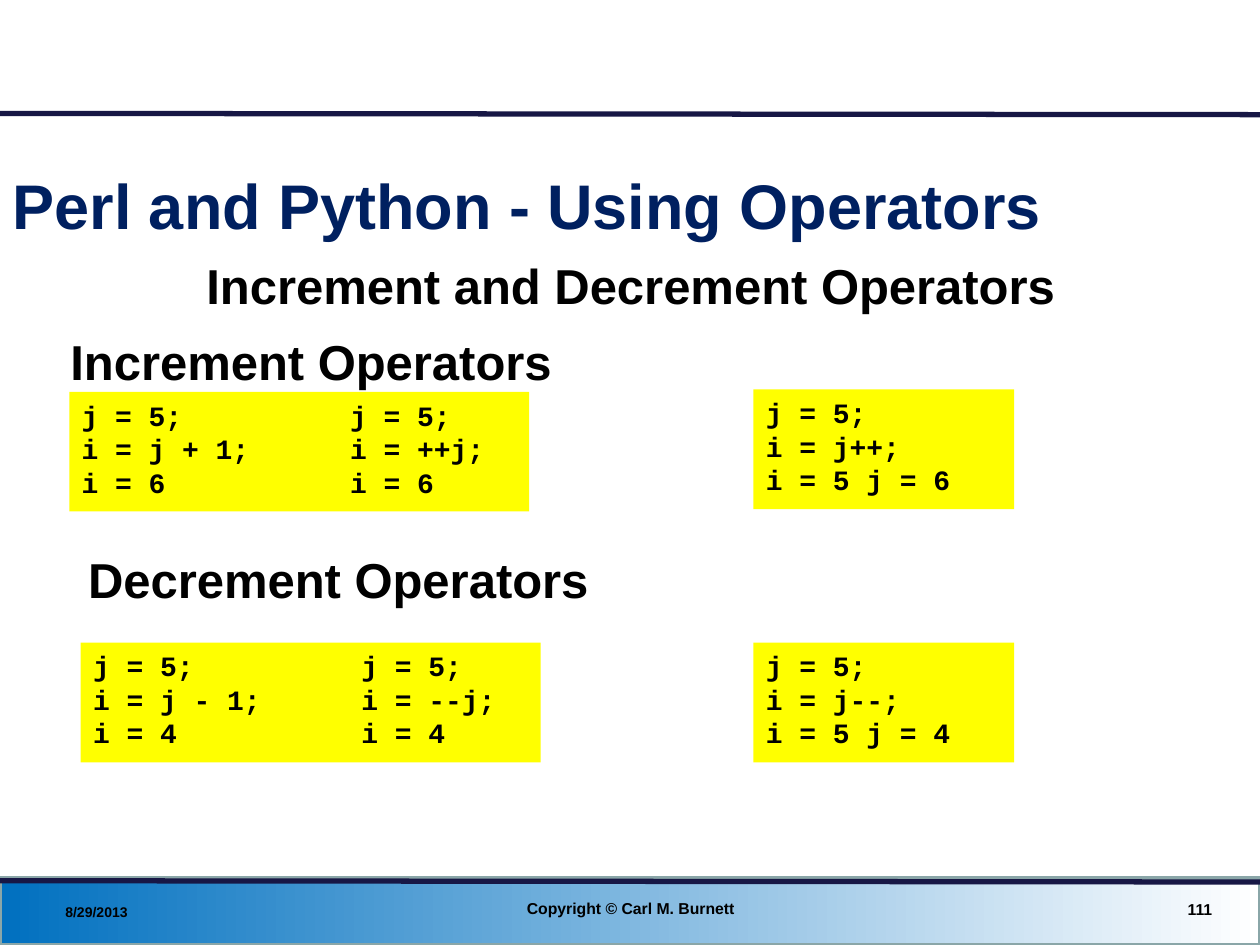
from lxml import etree
from pptx import Presentation
from pptx.dml.color import RGBColor
from pptx.enum.shapes import MSO_CONNECTOR, MSO_SHAPE
from pptx.enum.text import MSO_ANCHOR, MSO_AUTO_SIZE, PP_ALIGN
from pptx.oxml.ns import qn
from pptx.util import Pt

PX = 9144  # 100 px to the inch
W, H = 1000, 750

BLACK = RGBColor(0, 0, 0)
WHITE = RGBColor(0xFF, 0xFF, 0xFF)
NAVY = RGBColor(0x00, 0x20, 0x60)
RULE = RGBColor(0x17, 0x17, 0x45)
BLUE = RGBColor(0x00, 0x70, 0xC0)
EDGE = RGBColor(0x8A, 0xA6, 0xA8)
YELLOW = RGBColor(0xFF, 0xFF, 0x00)

TITLE = dict(name="Arial", size=Pt(36), bold=True)
HEADING = dict(name="Arial", size=Pt(28), bold=True)
CODE = dict(name="Courier New", size=Pt(16), bold=True)
NOTE = dict(name="Arial", size=Pt(9), bold=True)
DATE = dict(NOTE, size=Pt(8))
CODE_TAB = 213


def emu(*lengths):
    return [n * PX for n in lengths]


def place(sp, box):
    sp.left, sp.top, sp.width, sp.height = emu(*box)


def write(sp, lines, style, color=BLACK, align=PP_ALIGN.LEFT,
          anchor=MSO_ANCHOR.TOP, inset=5, tab=None):
    tf = sp.text_frame
    tf.word_wrap = True
    tf.auto_size = MSO_AUTO_SIZE.NONE
    tf.vertical_anchor = anchor
    tf.margin_left = tf.margin_right = 10 * PX
    tf.margin_top, tf.margin_bottom = emu(inset, 5)
    for i, line in enumerate(lines):
        p = tf.paragraphs[0] if i == 0 else tf.add_paragraph()
        p.alignment = align
        p.space_before = Pt(0)
        if tab:
            tabs = etree.SubElement(p._p.get_or_add_pPr(), qn("a:tabLst"))
            etree.SubElement(tabs, qn("a:tab"), pos=str(tab * PX), algn="l")
        r = p.add_run()
        r.text = line
        for key, value in style.items():
            setattr(r.font, key, value)
        r.font.color.rgb = color


def add_text(s, box, text, style, **options):
    write(s.shapes.add_textbox(*emu(*box)), [text], style, **options)


def add_rule(s, y):
    line = s.shapes.add_connector(MSO_CONNECTOR.STRAIGHT, *emu(0, y, W, y + 1))
    line.line.color.rgb = RULE
    line.line.width = Pt(3)
    etree.SubElement(line._element.spPr, qn("a:effectLst"))


def add_footer(s, x, y, w, h):
    # Gradient band
    band = s.shapes.add_shape(MSO_SHAPE.RECTANGLE, *emu(x, y, w, h))
    band.shadow.inherit = False
    band.fill.gradient()
    band.fill.gradient_angle = 0
    for stop, position, color in zip(band.fill.gradient_stops, (0, 1), (BLUE, WHITE)):
        stop.position = position
        stop.color.rgb = color
    band.line.color.rgb = EDGE
    band.line.width = Pt(2)
    add_rule(s, y + 2)

    # Date, copyright and slide number
    middle = MSO_ANCHOR.MIDDLE
    add_text(s, (x + 42, y + 13, 233, 27), "8/29/2013", DATE, anchor=middle)
    add_text(s, (x + 342, y + 9, 317, 29), "Copyright © Carl M. Burnett", NOTE,
             align=PP_ALIGN.CENTER, anchor=middle)
    add_text(s, (x + 739, y + 10, 233, 29), "111", NOTE,
             align=PP_ALIGN.RIGHT, anchor=middle)


def add_header(s):
    title, body = s.shapes.title, s.placeholders[1]
    place(title, (0, 114, 958, 97))
    write(title, ["Perl and Python - Using Operators"], TITLE, NAVY,
          anchor=MSO_ANCHOR.MIDDLE)
    place(body, (90, 194, 821, 56))
    pPr = body.text_frame.paragraphs[0]._p.get_or_add_pPr()
    pPr.set("marL", "0")
    pPr.set("indent", "0")
    etree.SubElement(pPr, qn("a:buNone"))
    write(body, ["Increment and Decrement Operators"], HEADING,
          align=PP_ALIGN.CENTER, inset=9)


def add_code(s, box, lines):
    sp = s.shapes.add_shape(MSO_SHAPE.RECTANGLE, *emu(*box))
    sp.shadow.inherit = False
    sp.fill.solid()
    sp.fill.fore_color.rgb = YELLOW
    sp.line.fill.background()
    write(sp, lines, CODE, tab=CODE_TAB)


def add_operators(s, x, y, heading, prefix_box, prefix, postfix_box, postfix):
    """Heading with its prefix and postfix code; boxes are (dx, dy)."""
    add_text(s, (x, y, 821, 56), heading, HEADING, inset=9)
    for (dx, dy), w, lines in ((prefix_box, 365, prefix), (postfix_box, 207, postfix)):
        add_code(s, (x + dx, y + dy, w, 95), lines)


def main():
    prs = Presentation()
    prs.slide_width, prs.slide_height = emu(W, H)
    s = prs.slides.add_slide(prs.slide_layouts[1])

    add_footer(s, 0, 697, W, 53)
    add_rule(s, 90)
    add_header(s)
    add_operators(s, 46, 254, "Increment Operators",
                  (9, 57), ["j = 5;\tj = 5;", "i = j + 1;\ti = ++j;", "i = 6\ti = 6"],
                  (552, 55), ["j = 5;", "i = j++;", "i = 5 j = 6"])
    add_operators(s, 60, 427, "Decrement Operators",
                  (4, 83), ["j = 5;\tj = 5;", "i = j - 1;\ti = --j;", "i = 4\ti = 4"],
                  (538, 83), ["j = 5;", "i = j--;", "i = 5 j = 4"])
    prs.save("out.pptx")


if __name__ == "__main__":
    main()
